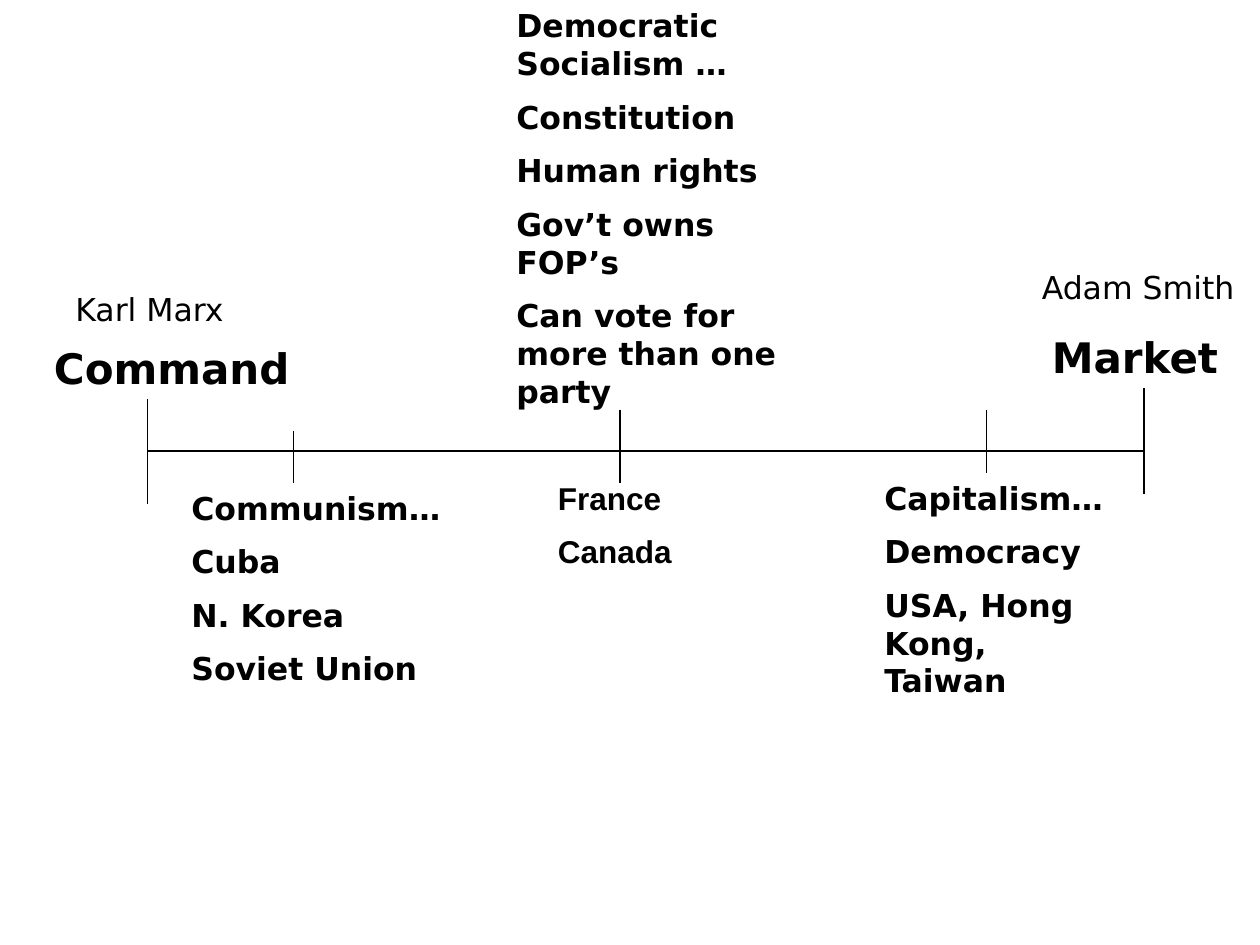
from lxml import etree
from pptx import Presentation
from pptx.dml.color import RGBColor
from pptx.enum import shapes
from pptx.oxml.ns import qn
from pptx.util import Inches, Pt

BLACK = RGBColor(0, 0, 0)
AXIS_Y = 3.58
AXIS_LEFT, AXIS_RIGHT = 1.17, 9.08

# x, top, bottom
TICKS = [
    (AXIS_LEFT, 3.17, 4),
    (2.33, 3.42, 3.83),
    (4.92, 3.25, 3.83),
    (7.83, 3.25, 3.75),
    (AXIS_RIGHT, 3.08, 3.92),
]


def add_line(slide, x1, y1, x2, y2):
    line = slide.shapes.add_connector(
        shapes.MSO_CONNECTOR.STRAIGHT,
        Inches(x1), Inches(y1), Inches(x2), Inches(y2))
    line.line.color.rgb = BLACK
    line.line.width = Pt(0.75)
    etree.SubElement(line._element.spPr, qn("a:effectLst"))


def add_text(slide, lines, left, top, width, height,
             size=18, bold=True, font="DejaVu Sans"):
    """Add a text box with one paragraph for each line."""
    box = slide.shapes.add_textbox(
        Inches(left), Inches(top), Inches(width), Inches(height))
    frame = box.text_frame
    frame.word_wrap = True
    frame.text = "\n".join(lines)
    for index, paragraph in enumerate(frame.paragraphs):
        paragraph.space_before = Pt(size / 2 if index else 0)
        paragraph.font.name = font
        paragraph.font.size = Pt(size)
        paragraph.font.bold = bold
        paragraph.font.color.rgb = BLACK


def add_axis(slide):
    add_line(slide, AXIS_LEFT, AXIS_Y, AXIS_RIGHT, AXIS_Y)
    for x, top, bottom in TICKS:
        add_line(slide, x, top, x, bottom)


def add_end_labels(slide):
    add_text(slide, ["Command"], 0.33, 2.67, 2.25, 0.5, size=24)
    add_text(slide, ["Market"], 8.25, 2.58, 1.75, 0.5, size=24)
    add_text(slide, ["Karl Marx"], 0.5, 2.25, 1.75, 0.4, bold=False)
    add_text(slide, ["Adam Smith"], 8.17, 2.08, 1.83, 0.4, bold=False)


def add_systems(slide):
    add_text(slide, ["Communism…", "Cuba", "N. Korea", "Soviet Union"],
             1.42, 3.83, 2.25, 1.76)
    add_text(slide, ["Democratic Socialism …", "Constitution", "Human rights",
                     "Gov’t owns FOP’s", "Can vote for more than one party"],
             4, 0, 2.5, 4.31)
    add_text(slide, ["France", "Canada"], 4.33, 3.75, 1.42, 1.3, font="Arial")
    add_text(slide, ["Capitalism…", "Democracy", "USA, Hong Kong, Taiwan"],
             6.92, 3.75, 2, 1.9)


def main():
    presentation = Presentation()
    presentation.slide_width = Inches(10)
    presentation.slide_height = Inches(7.5)
    blank_layout = presentation.slide_layouts[6]
    slide = presentation.slides.add_slide(blank_layout)
    add_axis(slide)
    add_end_labels(slide)
    add_systems(slide)
    presentation.save("out.pptx")


if __name__ == "__main__":
    main()
